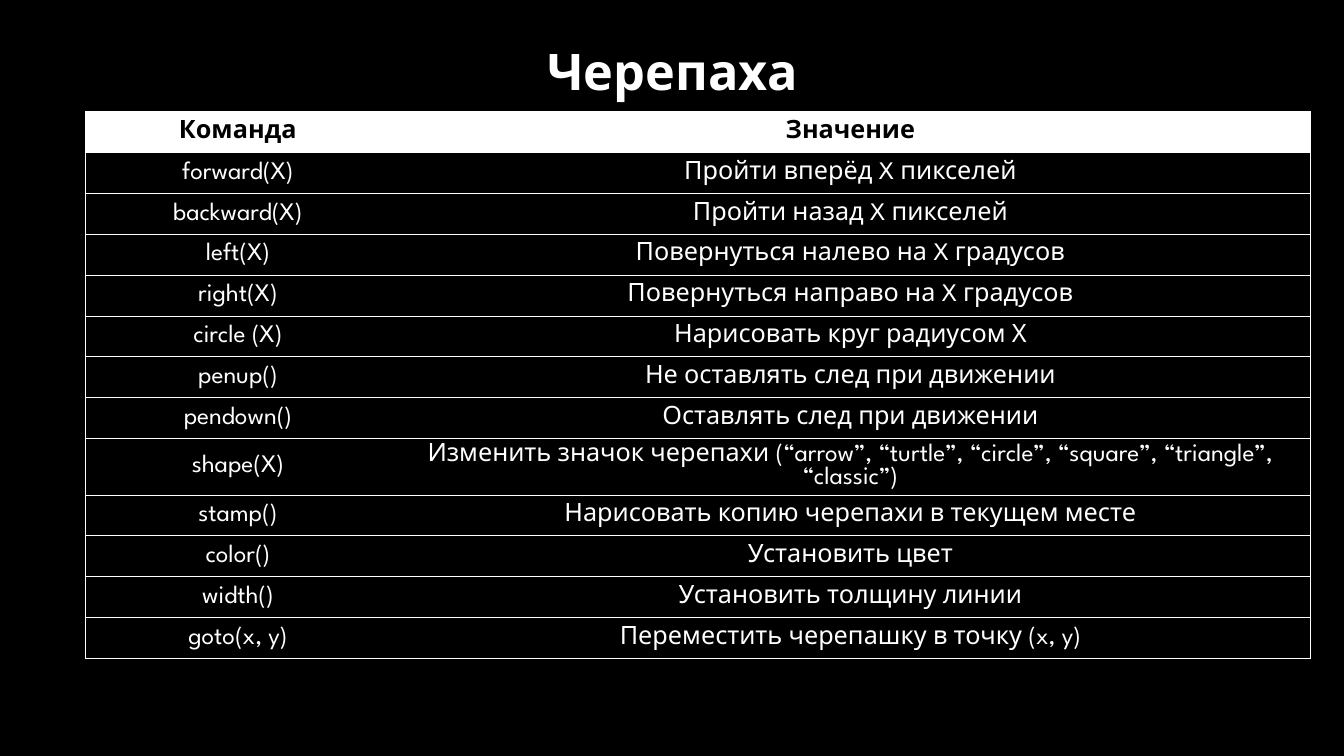
from typing import NamedTuple

from lxml.etree import SubElement
from pptx import Presentation
from pptx.dml.color import RGBColor
from pptx.enum.text import MSO_ANCHOR, PP_ALIGN
from pptx.oxml.ns import qn
from pptx.slide import Slide
from pptx.table import _Cell
from pptx.text.text import TextFrame
from pptx.util import Inches, Pt

BLACK = RGBColor(0x00, 0x00, 0x00)
WHITE = RGBColor(0xFF, 0xFF, 0xFF)
FONT = "League Spartan"
COLUMN_WIDTHS = (3.02, 9.13)
TABLE_HEIGHT = 5.27


class Command(NamedTuple):
    name: str
    meaning: str


HEADER = Command("Команда", "Значение")
COMMANDS = [
    Command("forward(X)", "Пройти вперёд X пикселей"),
    Command("backward(X)", "Пройти назад X пикселей"),
    Command("left(X)", "Повернуться налево на X градусов"),
    Command("right(X)", "Повернуться направо на X градусов"),
    Command("circle (X)", "Нарисовать круг радиусом Х"),
    Command("penup()", "Не оставлять след при движении"),
    Command("pendown()", "Оставлять след при движении"),
    Command("shape(X)", "Изменить значок черепахи (“arrow”, “turtle”, “circle”, "
                        "“square”, “triangle”, “classic”)"),
    Command("stamp()", "Нарисовать копию черепахи в текущем месте"),
    Command("color()", "Установить цвет"),
    Command("width()", "Установить толщину линии"),
    Command("goto(x, y)", "Переместить черепашку в точку (x, y)"),
]


def write_centred(frame: TextFrame, text: str, size: int, color: RGBColor, bold: bool) -> None:
    paragraph = frame.paragraphs[0]
    paragraph.alignment = PP_ALIGN.CENTER
    run = paragraph.add_run()
    run.text = text
    run.font.name = FONT
    run.font.size = Pt(size)
    run.font.bold = bold
    run.font.color.rgb = color


def set_borders(cell: _Cell, hidden_side: str) -> None:
    """Draw thin white borders on every side but the hidden one."""
    properties = cell._tc.get_or_add_tcPr()
    for side in ("lnL", "lnR", "lnT", "lnB"):
        line = SubElement(properties, qn(f"a:{side}"), w=str(Pt(0.75)))
        if side == hidden_side:
            SubElement(line, qn("a:noFill"))
        else:
            fill = SubElement(line, qn("a:solidFill"))
            SubElement(fill, qn("a:srgbClr"), val=str(WHITE))


def add_title(slide: Slide) -> None:
    title = slide.shapes.title
    title.left, title.top = Inches(2.25), Inches(0.36)
    title.width, title.height = Inches(8.84), Inches(0.75)
    title.text_frame.vertical_anchor = MSO_ANCHOR.MIDDLE
    write_centred(title.text_frame, "Черепаха", 36, WHITE, True)
    title.text_frame.paragraphs[0].line_spacing = 0.9


def add_command_table(slide: Slide) -> None:
    rows = [HEADER, *COMMANDS]
    table = slide.shapes.add_table(
        len(rows), len(COLUMN_WIDTHS), Inches(0.85), Inches(1.11),
        Inches(sum(COLUMN_WIDTHS)), Inches(TABLE_HEIGHT)).table
    table.horz_banding = False
    for column, width in zip(table.columns, COLUMN_WIDTHS):
        column.width = Inches(width)
    for row, command in zip(table.rows, rows):
        is_header = command is HEADER
        for cell, text, inner_side in zip(row.cells, command, ("lnR", "lnL")):
            set_borders(cell, inner_side)
            cell.fill.solid()
            cell.fill.fore_color.rgb = WHITE if is_header else BLACK
            cell.vertical_anchor = MSO_ANCHOR.MIDDLE
            write_centred(cell.text_frame, text, 18, BLACK if is_header else WHITE, is_header)


def main() -> None:
    presentation = Presentation()
    presentation.slide_width, presentation.slide_height = Inches(13.33), Inches(7.5)
    slide = presentation.slides.add_slide(presentation.slide_layouts.get_by_name("Title Only"))
    slide.background.fill.solid()
    slide.background.fill.fore_color.rgb = BLACK
    add_title(slide)
    add_command_table(slide)
    presentation.save("out.pptx")


if __name__ == "__main__":
    main()
